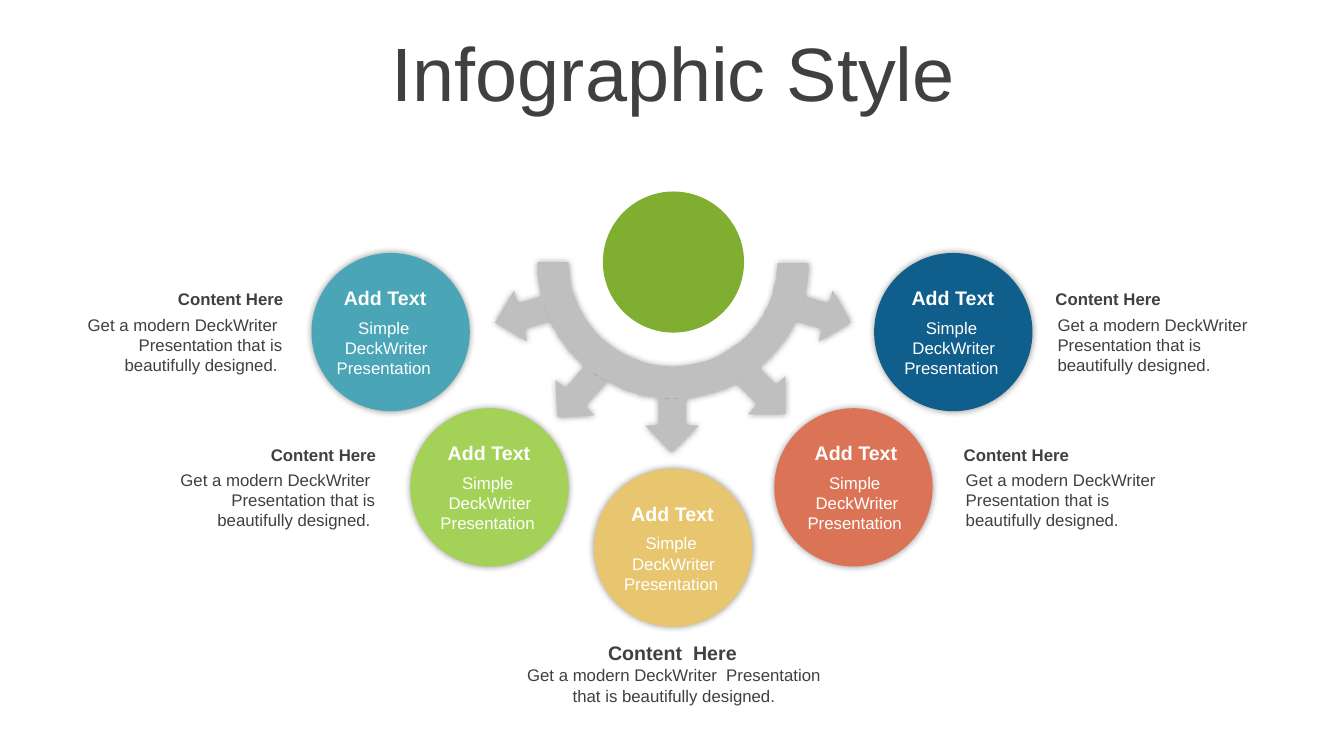
from itertools import chain
from math import atan2, cos, hypot, sin

from lxml.etree import SubElement
from pptx import Presentation
from pptx.dml.color import RGBColor
from pptx.enum.shapes import MSO_SHAPE as Shape
from pptx.enum.text import MSO_ANCHOR as Anchor, PP_ALIGN as Align
from pptx.oxml.ns import qn
from pptx.util import Pt

PX = 9144
FONT = "Arial"
DARK, WHITE, GREY, LEAF = "404040", "FFFFFF", "BFBFBF", "80AE30"
ARC_CENTRE = (667, 260)
BODY = "Get a modern DeckWriter  Presentation that is beautifully designed."
CIRCLE_SIZE = 157

CIRCLES = [
    (589, 465, 601, "E7C66F"),
    (407, 405, 419, "A4D157"),
    (309, 251, 316, "4AA5B7"),
    (768, 405, 783, "DB7457"),
    (867, 251, 879, "0F5E8C"),
]
CAPTIONS = [
    (70, 282, Align.RIGHT),
    (162, 436, Align.RIGHT),
    (1037, 282, Align.LEFT),
    (946, 436, Align.LEFT),
]
ARROWS = [
    [(546, 319), (520, 326), (523, 339), (491, 320), (510, 288), (513, 301), (537, 294)],
    [(602, 379), (580, 403), (590, 412), (553, 414), (551, 377), (561, 385), (580, 363)],
    [(680, 395), (680, 422), (693, 422), (666, 449), (640, 422), (653, 422), (653, 395)],
    [(753, 365), (770, 382), (779, 373), (779, 411), (742, 411), (751, 401), (730, 380)],
    [(798, 294), (822, 301), (826, 288), (844, 320), (812, 339), (815, 326), (789, 319)],
]
OUTER_ENDS = (533, 260), (802, 261)
INNER_ENDS = (564, 260), (771, 261)


def colour(value):
    return RGBColor.from_string(value)


def arc(start, end, steps=24):
    """Return the points of an arc around ARC_CENTRE, both ends included."""
    centre_x, centre_y = ARC_CENTRE
    (angle, radius), (last_angle, last_radius) = [
        (atan2(y - centre_y, x - centre_x), hypot(x - centre_x, y - centre_y))
        for x, y in (start, end)
    ]
    points = []
    for step in range(steps + 1):
        share = step / steps
        turn = angle + (last_angle - angle) * share
        reach = radius + (last_radius - radius) * share
        points.append((centre_x + reach * cos(turn), centre_y + reach * sin(turn)))
    return points


def hub_outline():
    """Return the outline of the half ring with its five arrows."""
    left, right = OUTER_ENDS
    starts = [right] + [arrow[0] for arrow in reversed(ARROWS)]
    ends = [arrow[-1] for arrow in reversed(ARROWS)] + [left]
    arrows = [arrow[::-1] for arrow in reversed(ARROWS)] + [[]]
    outer = chain.from_iterable(
        arc(start, end) + arrow for start, end, arrow in zip(starts, ends, arrows)
    )
    return list(outer) + arc(*INNER_ENDS, steps=60)


class Board:
    """Draws styled elements on one slide, measured in px."""

    def __init__(self, slide):
        self.slide = slide

    def finish(self, shape, fill, shadow=True):
        shape.fill.solid()
        shape.fill.fore_color.rgb = colour(fill)
        shape.line.fill.background()
        shape.shadow.inherit = False
        if shadow:
            effects = shape._element.spPr.find(qn("a:effectLst"))
            outer = SubElement(effects, qn("a:outerShdw"), blurRad=str(Pt(5)),
                               dist="0", dir="0", algn="ctr", rotWithShape="0")
            black = SubElement(outer, qn("a:srgbClr"), val="000000")
            SubElement(black, qn("a:alpha"), val="40000")

    def circle(self, x, y, size, fill, shadow=True):
        shape = self.slide.shapes.add_shape(
            Shape.OVAL, x * PX, y * PX, size * PX, size * PX)
        self.finish(shape, fill, shadow)

    def outline(self, points, fill):
        builder = self.slide.shapes.build_freeform(*points[0], scale=PX)
        builder.add_line_segments(points[1:], close=True)
        self.finish(builder.convert_to_shape(), fill)

    def text(self, x, y, width, height, lines, size, align=Align.CENTER,
             ink=DARK, bold=False, anchor=Anchor.TOP):
        box = self.slide.shapes.add_textbox(x * PX, y * PX, width * PX, height * PX)
        frame = box.text_frame
        frame.word_wrap = True
        frame.vertical_anchor = anchor
        for index, line in enumerate(lines):
            paragraph = frame.add_paragraph() if index else frame.paragraphs[0]
            paragraph.alignment = align
            run = paragraph.add_run()
            run.text = line
            run.font.name = FONT
            run.font.size = Pt(size)
            run.font.bold = bold
            run.font.color.rgb = colour(ink)
        return frame


def main():
    presentation = Presentation()
    presentation.slide_width, presentation.slide_height = 1333 * PX, 750 * PX
    board = Board(presentation.slides.add_slide(presentation.slide_layouts[6]))

    title = board.text(35, 37, 1266, 79, ["Infographic Style"], 54, anchor=Anchor.MIDDLE)
    title.paragraphs[0].line_spacing = 0.9
    title.paragraphs[0].space_before = Pt(10)

    board.outline(hub_outline(), GREY)
    for x, y, label_x, fill in CIRCLES:
        board.circle(x, y, CIRCLE_SIZE, fill)
        board.text(label_x, y + 28, 132, 34, ["Add Text"], 14, ink=WHITE, bold=True)
        board.text(label_x + 1, y + 59, 132, 71,
                   ["Simple ", "DeckWriter Presentation "], 12, ink=WHITE)

    for x, y, align in CAPTIONS:
        body = BODY + " " if align == Align.RIGHT else BODY
        board.text(x + 2, y + 25, 218, 71, [body], 12, align)
        board.text(x, y, 221, 30, ["Content Here"], 12, align, bold=True)
    board.text(497, 630, 340, 34, ["Content  Here"], 14, bold=True, anchor=Anchor.MIDDLE)
    board.text(499, 655, 339, 50, [BODY], 12)

    board.circle(598, 190, 140, LEAF, shadow=False)
    presentation.save("out.pptx")


if __name__ == "__main__":
    main()
